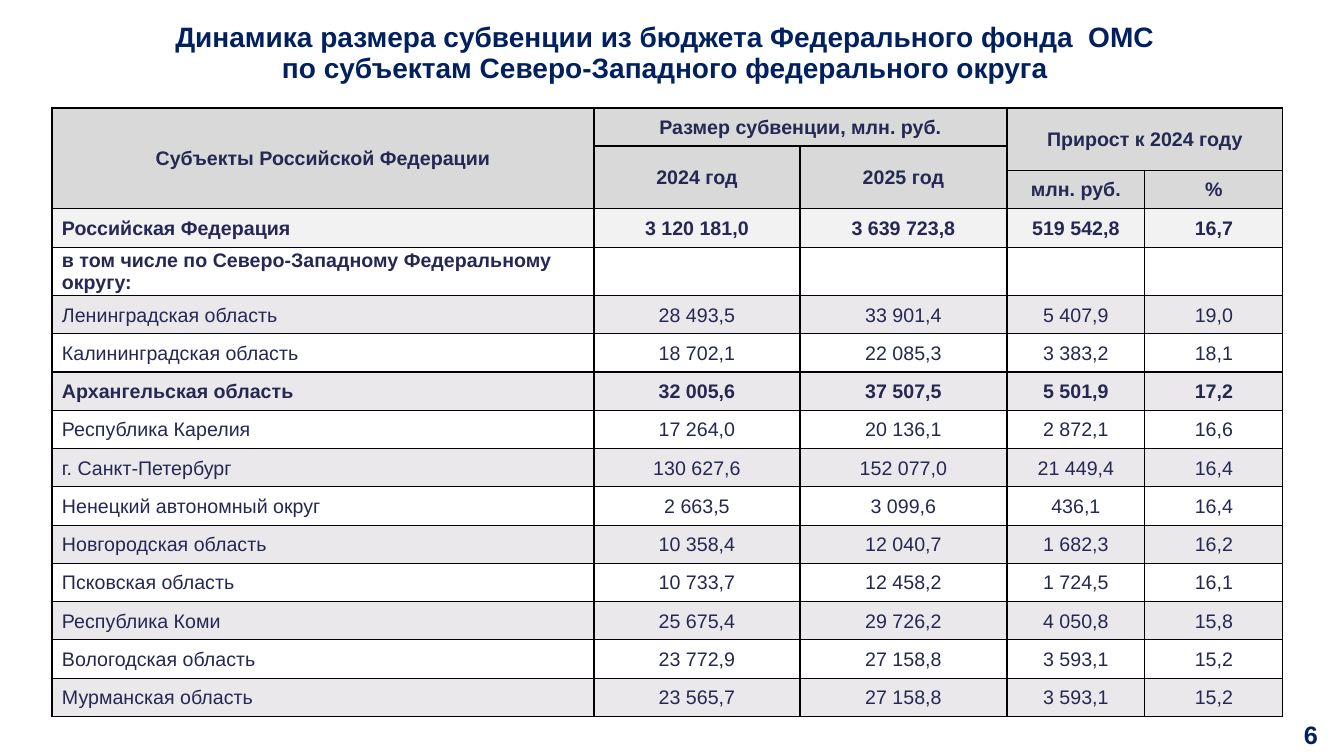
import dataclasses

import pptx
import pptx.dml.color
import pptx.enum.text
import pptx.oxml
import pptx.oxml.ns
import pptx.util

SCALE = 914400 / 100.8
ALIGN = pptx.enum.text.PP_ALIGN
MIDDLE = pptx.enum.text.MSO_ANCHOR.MIDDLE


@dataclasses.dataclass(frozen=True)
class Theme:
    font: str = "Arial"
    navy: str = "002060"
    ink: str = "242852"
    border: str = "000000"
    header: str = "D9D9D9"
    total: str = "BFBFBF"
    band: str = "9D90A0"
    tint: int = 20
    title_size: int = 20
    table_size: int = 14
    number_size: int = 18
    border_width: int = 1


THEME = Theme()

TITLE = (
    "Динамика размера субвенции из бюджета Федерального фонда  ОМС\v"
    "по субъектам Северо-Западного федерального округа"
)
HEADERS = [
    (0, 0, 2, 0, "Субъекты Российской Федерации"),
    (0, 1, 0, 2, "Размер субвенции, млн. руб."),
    (0, 3, 1, 4, "Прирост к 2024 году"),
    (1, 1, 2, 1, "2024 год"),
    (1, 2, 2, 2, "2025 год"),
    (2, 3, 2, 3, "млн. руб."),
    (2, 4, 2, 4, "%"),
]
REGIONS = [
    ("Российская Федерация", "3 120 181,0", "3 639 723,8", "519 542,8", "16,7"),
    ("в том числе по Северо-Западному Федеральному округу:", "", "", "", ""),
    ("Ленинградская область", "28 493,5", "33 901,4", "5 407,9", "19,0"),
    ("Калининградская область", "18 702,1", "22 085,3", "3 383,2", "18,1"),
    ("Архангельская область", "32 005,6", "37 507,5", "5 501,9", "17,2"),
    ("Республика Карелия", "17 264,0", "20 136,1", "2 872,1", "16,6"),
    ("г. Санкт-Петербург", "130 627,6", "152 077,0", "21 449,4", "16,4"),
    ("Ненецкий автономный округ", "2 663,5", "3 099,6", "436,1", "16,4"),
    ("Новгородская область", "10 358,4", "12 040,7", "1 682,3", "16,2"),
    ("Псковская область", "10 733,7", "12 458,2", "1 724,5", "16,1"),
    ("Республика Коми", "25 675,4", "29 726,2", "4 050,8", "15,8"),
    ("Вологодская область", "23 772,9", "27 158,8", "3 593,1", "15,2"),
    ("Мурманская область", "23 565,7", "27 158,8", "3 593,1", "15,2"),
]
BOLD_REGIONS = {REGIONS[0][0], REGIONS[1][0], "Архангельская область"}
HEADER_ROWS = 3
COLUMN_WIDTHS = [542, 206, 207, 138, 138]
LEADING_HEIGHTS = [38, 23, 38, 39, 45]


def px(length):
    return pptx.util.Emu(round(length * SCALE))


def apply(target, values):
    for name, value in values.items():
        setattr(target, name, value)


def write(frame, text, size, color, bold, align):
    paragraph = frame.paragraphs[0]
    paragraph.text = text
    paragraph.alignment = align
    apply(paragraph.font, {"name": THEME.font, "size": pptx.util.Pt(size), "bold": bold})
    for run in paragraph.runs:
        apply(run.font, {"name": THEME.font, "size": pptx.util.Pt(size), "bold": bold})
        run.font.color.rgb = pptx.dml.color.RGBColor.from_string(color)
    return paragraph


def add_label(slide, box, text, size, align):
    frame = slide.shapes.add_textbox(*map(px, box)).text_frame
    apply(frame, {
        "word_wrap": True, "vertical_anchor": MIDDLE,
        "margin_left": px(10), "margin_right": px(10),
        "margin_top": px(5), "margin_bottom": px(5),
    })
    return write(frame, text, size, THEME.navy, True, align)


def add_title(slide, box):
    add_label(slide, box, TITLE, THEME.title_size, ALIGN.CENTER).line_spacing = 0.92


def add_page_number(slide, box):
    add_label(slide, box, "6", THEME.number_size, ALIGN.RIGHT)


def fill_cell(cell, color, opacity=100):
    if color is None:
        cell.fill.background()
        return
    cell.fill.solid()
    cell.fill.fore_color.rgb = pptx.dml.color.RGBColor.from_string(color)
    if opacity < 100:
        tint = next(cell._tc.tcPr.iter(pptx.oxml.ns.qn("a:srgbClr")))
        tint.append(pptx.oxml.parse_xml(
            f'<a:alpha {pptx.oxml.ns.nsdecls("a")} val="{opacity * 1000}"/>'))


def border_cell(cell):
    for position, side in enumerate("LRTB"):
        cell._tc.tcPr.insert(position, pptx.oxml.parse_xml(
            f'<a:ln{side} {pptx.oxml.ns.nsdecls("a")} w="{pptx.util.Pt(THEME.border_width)}">'
            f'<a:solidFill><a:srgbClr val="{THEME.border}"/></a:solidFill></a:ln{side}>'))


def format_cell(cell, color, opacity, side_margin):
    apply(cell, {
        "vertical_anchor": MIDDLE,
        "margin_left": px(side_margin), "margin_right": px(side_margin),
        "margin_top": px(1), "margin_bottom": 0,
    })
    fill_cell(cell, color, opacity)
    border_cell(cell)


def add_headers(table):
    for row in range(HEADER_ROWS):
        for column in range(len(COLUMN_WIDTHS)):
            format_cell(table.cell(row, column), THEME.header, 100, 1)
    for top, left, bottom, right, text in HEADERS:
        cell = table.cell(top, left)
        if (top, left) != (bottom, right):
            cell.merge(table.cell(bottom, right))
        write(cell.text_frame, text, THEME.table_size, THEME.ink, True, ALIGN.CENTER)


def add_regions(table):
    for index, region in enumerate(REGIONS):
        color = THEME.total if index == 0 else THEME.band if index % 2 == 0 else None
        bold = region[0] in BOLD_REGIONS
        for column, text in enumerate(region):
            cell = table.cell(HEADER_ROWS + index, column)
            format_cell(cell, color, THEME.tint, 1 if column else 10)
            align = ALIGN.CENTER if column else ALIGN.LEFT
            write(cell.text_frame, text, THEME.table_size, THEME.ink, bold, align)


def add_subsidy_table(slide, box):
    row_count = HEADER_ROWS + len(REGIONS)
    table = slide.shapes.add_table(row_count, len(COLUMN_WIDTHS), *map(px, box)).table
    apply(table, {"first_row": False, "horz_banding": False})
    for column, width in zip(table.columns, COLUMN_WIDTHS):
        column.width = px(width)
    remaining = row_count - len(LEADING_HEIGHTS)
    region_height = (box[3] - sum(LEADING_HEIGHTS)) / remaining
    for row, height in zip(table.rows, LEADING_HEIGHTS + [region_height] * remaining):
        row.height = px(height)
    add_headers(table)
    add_regions(table)


def main():
    presentation = pptx.Presentation()
    apply(presentation, {"slide_width": px(1344), "slide_height": px(756)})
    slide = presentation.slides.add_slide(presentation.slide_layouts[6])
    add_title(slide, (60, 22, 1210, 64))
    add_subsidy_table(slide, (52, 108, sum(COLUMN_WIDTHS), 604))
    add_page_number(slide, (1283, 714, 45, 40))
    presentation.save("out.pptx")


if __name__ == "__main__":
    main()
